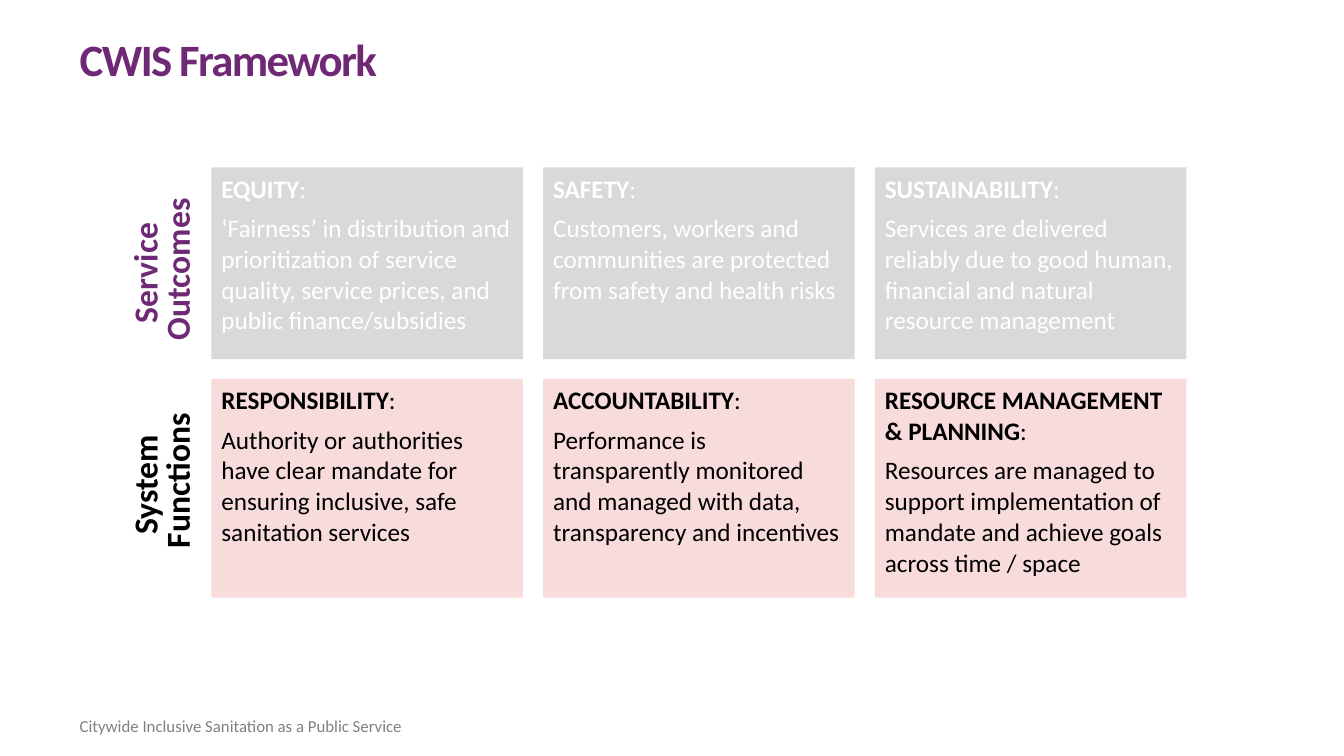
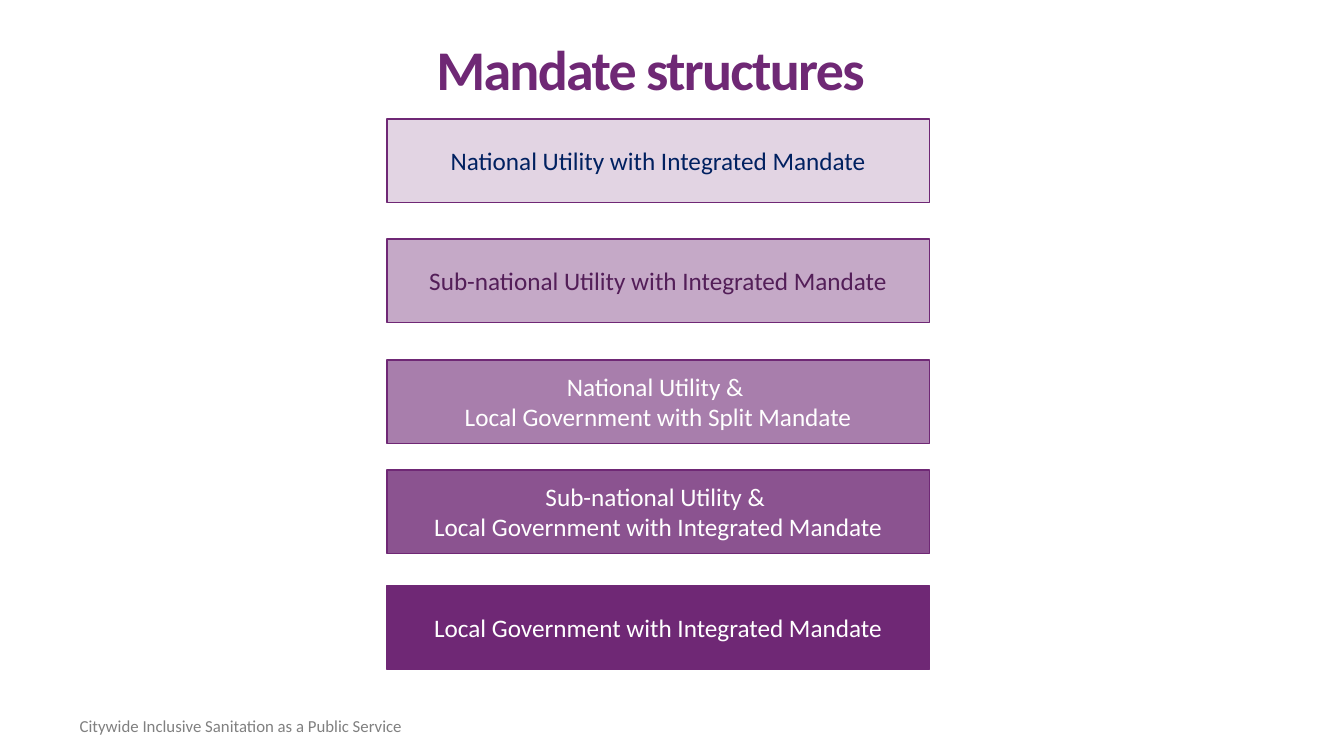
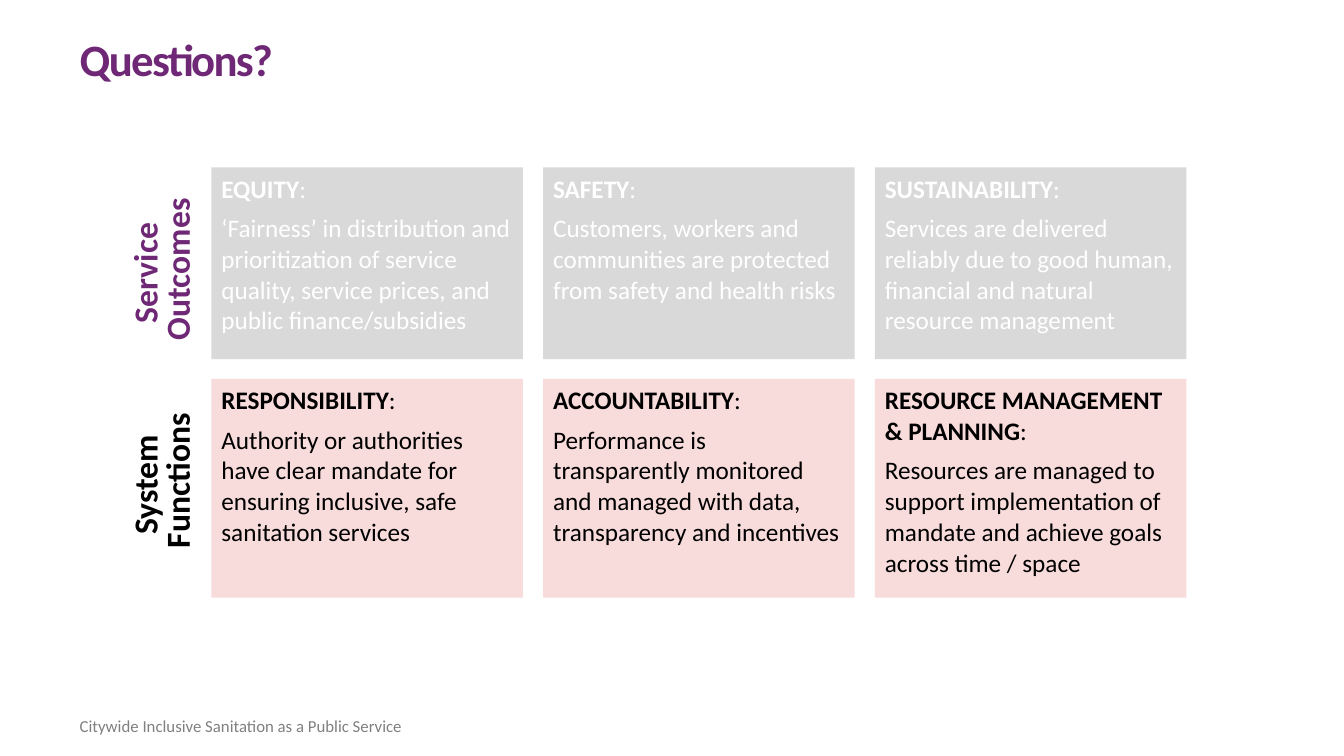
"""Build three slides on the citywide inclusive sanitation framework."""
import lxml.etree
import pptx
import pptx.dml.color
import pptx.enum.shapes
import pptx.enum.text
import pptx.oxml.ns
import pptx.util

Cm = pptx.util.Cm
Pt = pptx.util.Pt
RGBColor = pptx.dml.color.RGBColor
ALIGN = pptx.enum.text.PP_ALIGN
ANCHOR = pptx.enum.text.MSO_ANCHOR

PURPLE = RGBColor(0x6F, 0x28, 0x75)
DARK_PURPLE = RGBColor(0x53, 0x1E, 0x58)
NAVY = RGBColor(0x00, 0x20, 0x60)
RED = RGBColor(0xD3, 0x13, 0x12)
LIGHT_GREY = RGBColor(0xD9, 0xD9, 0xD9)
GREY = RGBColor(0x80, 0x80, 0x80)
WHITE = RGBColor(0xFF, 0xFF, 0xFF)
BLACK = RGBColor(0x00, 0x00, 0x00)

FONT = "Calibri"
FOOTER = "Citywide Inclusive Sanitation as a Public Service"
MARGIN = 2.01
CARD_LEFT, CARD_STEP, CARD_WIDTH = 5.33, 8.36, 7.85

FRAMEWORK_ROWS = [
    {
        "label": ("Service ", "Outcomes"), "label_color": PURPLE,
        "top": 4.22, "height": 4.83,
        "fill": LIGHT_GREY, "opacity": 100, "text_color": WHITE,
        "cards": [
            ("EQUITY", "‘Fairness’ in distribution and prioritization of service "
             "quality, service prices, and public finance/subsidies"),
            ("SAFETY", "Customers, workers and communities are protected from "
             "safety and health risks"),
            ("SUSTAINABILITY", "Services are delivered reliably due to good human, "
             "financial and natural resource management"),
        ],
    },
    {
        "label": ("System ", "Functions"), "label_color": BLACK,
        "top": 9.55, "height": 5.51,
        "fill": RED, "opacity": 15, "text_color": BLACK,
        "cards": [
            ("RESPONSIBILITY", "Authority or authorities have clear mandate for "
             "ensuring inclusive, safe sanitation services"),
            ("ACCOUNTABILITY", "Performance is transparently monitored and managed "
             "with data, transparency and incentives"),
            ("RESOURCE MANAGEMENT & PLANNING", "Resources are managed to support "
             "implementation of mandate and achieve goals across time / space"),
        ],
    },
]

MANDATES = [
    (3.0, 20, NAVY, ["National Utility with Integrated Mandate"]),
    (6.02, 40, DARK_PURPLE, ["Sub-national Utility with Integrated Mandate"]),
    (9.07, 60, WHITE, ["National Utility & ", "Local Government with Split Mandate"]),
    (11.84, 80, WHITE, ["Sub-national Utility & ",
                        "Local Government with Integrated Mandate"]),
    (14.76, 100, WHITE, ["Local Government with Integrated Mandate"]),
]


def add_run(paragraph, text, size, color, bold=False, spacing=None):
    """Append one styled run to a paragraph."""
    run = paragraph.add_run()
    run.text = text
    run.font.name = FONT
    run.font.size = Pt(size)
    run.font.bold = bold
    run.font.color.rgb = color
    if spacing is not None:
        run._r.get_or_add_rPr().set("spc", str(round(spacing * 100)))


def prepare_frame(shape, anchor=ANCHOR.TOP, inset=True):
    """Set wrapping, anchor and insets, and return the text frame."""
    frame = shape.text_frame
    frame.word_wrap = True
    frame.vertical_anchor = anchor
    frame.margin_left = frame.margin_right = Cm(0.25 if inset else 0)
    frame.margin_top = frame.margin_bottom = Cm(0.13 if inset else 0)
    return frame


def add_text_box(slide, left, top, width, height, **frame_options):
    """Add a text box and return it with its text frame."""
    box = slide.shapes.add_textbox(Cm(left), Cm(top), Cm(width), Cm(height))
    return box, prepare_frame(box, **frame_options)


def add_panel(slide, left, top, width, height, fill, opacity=100, line=None,
              anchor=ANCHOR.TOP):
    """Add a filled rectangle and return its text frame."""
    shape = slide.shapes.add_shape(pptx.enum.shapes.MSO_SHAPE.RECTANGLE,
                                   Cm(left), Cm(top), Cm(width), Cm(height))
    shape.shadow.inherit = False
    shape.fill.solid()
    shape.fill.fore_color.rgb = fill
    if opacity < 100:
        qualify = pptx.oxml.ns.qn
        color = shape.element.spPr.find(qualify("a:solidFill"))[0]
        alpha = lxml.etree.SubElement(color, qualify("a:alpha"))
        alpha.set("val", str(opacity * 1000))
    if line is None:
        shape.line.fill.background()
    else:
        shape.line.color.rgb = line
        shape.line.width = Pt(1)
    return prepare_frame(shape, anchor)


def add_slide(presentation):
    """Add a blank slide with the shared footer."""
    slide = presentation.slides.add_slide(presentation.slide_layouts[6])
    frame = add_text_box(slide, MARGIN, 18.03, 18.85, 0.97, inset=False)[1]
    add_run(frame.paragraphs[0], FOOTER, 12, GREY)
    return slide


def add_title(slide, text, left=MARGIN, top=1.02, width=23.98, height=1.45, size=32,
              line_spacing=0.85, align=ALIGN.LEFT, **frame_options):
    """Add a title in the shared purple style."""
    frame = add_text_box(slide, left, top, width, height, **frame_options)[1]
    paragraph = frame.paragraphs[0]
    paragraph.alignment = align
    paragraph.line_spacing = line_spacing
    add_run(paragraph, text, size, PURPLE, bold=True, spacing=-1.2)


def add_row_label(slide, lines, row_top, color):
    """Add a label turned to read upwards beside a row of cards."""
    box, frame = add_text_box(slide, 1.68, row_top + 1.37, 4.93, 2.39,
                              anchor=ANCHOR.MIDDLE, inset=False)
    box.rotation = 270
    for index, line in enumerate(lines):
        paragraph = frame.add_paragraph() if index else frame.paragraphs[0]
        paragraph.alignment = ALIGN.CENTER
        paragraph.line_spacing = Pt(23)
        add_run(paragraph, line, 24, color, bold=True)


def add_card(slide, left, row, heading, body):
    """Add a card with a bold heading above its description."""
    frame = add_panel(slide, left, row["top"], CARD_WIDTH, row["height"],
                      row["fill"], row["opacity"])
    color = row["text_color"]
    heading_paragraph = frame.paragraphs[0]
    heading_paragraph.space_after = Pt(6)
    add_run(heading_paragraph, heading, 18, color, bold=True)
    add_run(heading_paragraph, ":", 18, color)
    body_paragraph = frame.add_paragraph()
    add_run(body_paragraph, body, 18, color)
    for paragraph in frame.paragraphs:
        paragraph.alignment = ALIGN.LEFT
        paragraph.line_spacing = Pt(22)


def add_framework_slide(presentation, title):
    """Add a slide with the two rows of framework cards."""
    slide = add_slide(presentation)
    add_title(slide, title, inset=False)
    for row in FRAMEWORK_ROWS:
        add_row_label(slide, row["label"], row["top"], row["label_color"])
        for column, (heading, body) in enumerate(row["cards"]):
            add_card(slide, CARD_LEFT + column * CARD_STEP, row, heading, body)


def add_mandate_slide(presentation):
    """Add the slide with the stack of mandate structures."""
    slide = add_slide(presentation)
    for top, opacity, color, lines in MANDATES:
        frame = add_panel(slide, 9.75, top, 13.67, 2.11, PURPLE, opacity,
                          line=PURPLE, anchor=ANCHOR.MIDDLE)
        paragraph = frame.paragraphs[0]
        paragraph.alignment = ALIGN.CENTER
        for index, line in enumerate(lines):
            if index:
                paragraph.add_line_break()
            add_run(paragraph, line, 18, color)
    add_title(slide, "Mandate structures", 9.37, 0.61, 14.05, 2.41, size=40,
              line_spacing=0.9, align=ALIGN.CENTER, anchor=ANCHOR.MIDDLE)


def main():
    """Build and save the presentation."""
    presentation = pptx.Presentation()
    presentation.slide_width = Cm(33.87)
    presentation.slide_height = Cm(19.05)
    add_framework_slide(presentation, "CWIS Framework")
    add_mandate_slide(presentation)
    add_framework_slide(presentation, "Questions?")
    presentation.save("out.pptx")


if __name__ == "__main__":
    main()
